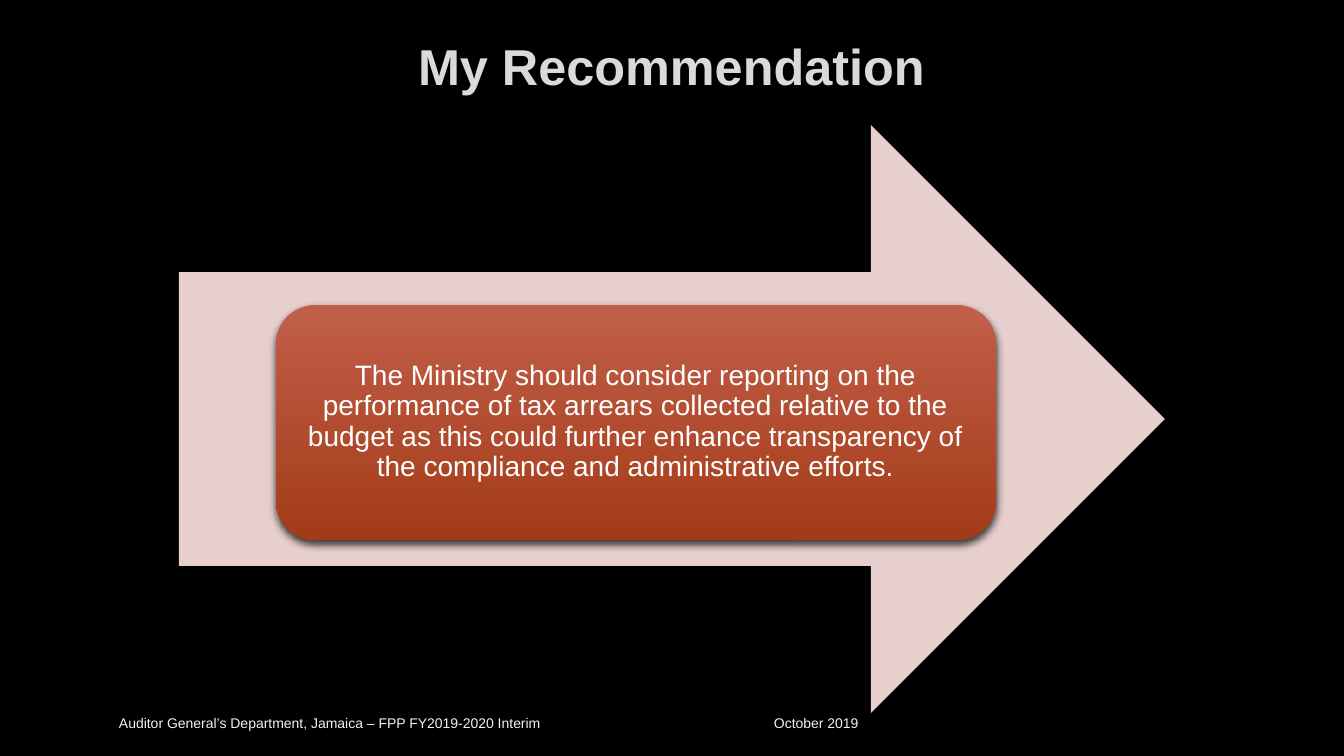
import pptx
import pptx.util
import pptx.dml.color
import pptx.enum.shapes
import pptx.enum.text
import pptx.oxml
import pptx.oxml.ns

WIDE, HIGH = 1344, 756
SCALE = 12192000 / WIDE
NS = pptx.oxml.ns.nsdecls("a")
SHAPE = pptx.enum.shapes.MSO_SHAPE
ALIGN = pptx.enum.text.PP_ALIGN


def px(num):
    return pptx.util.Emu(round(num * SCALE))


def paint(color, code):
    color.rgb = pptx.dml.color.RGBColor.from_string(code)


def add_text(slide, text, box, size, color, bold=False, align=ALIGN.LEFT,
             inset=(10, 5, 10, 5), line=None):
    """Add a middle-anchored text box; inset is left, top, right, bottom."""
    frame = slide.shapes.add_textbox(*map(px, box)).text_frame
    frame.word_wrap = True
    frame.vertical_anchor = pptx.enum.text.MSO_ANCHOR.MIDDLE
    (frame.margin_left, frame.margin_top,
     frame.margin_right, frame.margin_bottom) = map(px, inset)
    para = frame.paragraphs[0]
    para.alignment = align
    if line:
        para.line_spacing = line
    run = para.add_run()
    run.text = text
    run.font.name = "Arial"
    run.font.size = pptx.util.Pt(size)
    run.font.bold = bold
    paint(run.font.color, color)
    return para


def add_shape(slide, kind, box, fills, blur, dist, alpha):
    """Add a borderless shape with a downward shadow; two fills make a gradient."""
    shape = slide.shapes.add_shape(kind, *map(px, box))
    shape.line.fill.background()
    if len(fills) == 1:
        shape.fill.solid()
        paint(shape.fill.fore_color, fills[0])
    else:
        shape.fill.gradient()
        shape.fill.gradient_angle = 270
        for stop, place, code in zip(shape.fill.gradient_stops, (0, 1), fills):
            stop.position = place
            paint(stop.color, code)
    shape.shadow.inherit = False
    effects = shape.element.spPr.find(pptx.oxml.ns.qn("a:effectLst"))
    effects.append(pptx.oxml.parse_xml(
        f'<a:outerShdw {NS} blurRad="{pptx.util.Pt(blur)}" dist="{pptx.util.Pt(dist)}" '
        f'dir="5400000" rotWithShape="0"><a:srgbClr val="000000">'
        f'<a:alpha val="{alpha * 1000}"/></a:srgbClr></a:outerShdw>'))


def outline(para, code, width, alpha):
    props = para.runs[0].font._element
    props.insert(0, pptx.oxml.parse_xml(
        f'<a:ln {NS} w="{pptx.util.Pt(width)}"><a:solidFill><a:srgbClr val="{code}">'
        f'<a:alpha val="{alpha * 1000}"/></a:srgbClr></a:solidFill>'
        f'<a:prstDash val="solid"/></a:ln>'))


def tab_stop(para, place):
    para._p.get_or_add_pPr().append(pptx.oxml.parse_xml(
        f'<a:tabLst {NS}><a:tab pos="{px(place)}" algn="l"/></a:tabLst>'))


def main():
    deck = pptx.Presentation()
    deck.slide_width, deck.slide_height = px(WIDE), px(HIGH)
    slide = deck.slides.add_slide(deck.slide_layouts[6])
    slide.background.fill.solid()
    paint(slide.background.fill.fore_color, "000000")

    title = add_text(slide, "My Recommendation", (92, 40, 1159, 104), 36, "DADADA",
                     bold=True, align=ALIGN.CENTER, inset=(10, 5, 10, 58))
    outline(title, "404040", 0.75, 10)

    add_shape(slide, SHAPE.RIGHT_ARROW, (179, 125, 986, 588), ["E7CFCD"],
              blur=5, dist=2, alpha=60)
    add_shape(slide, SHAPE.ROUNDED_RECTANGLE, (276, 305, 720, 235),
              ["C25F4A", "A23B17"], blur=6, dist=3, alpha=75)
    add_text(slide, "The Ministry should consider reporting on the performance of tax "
             "arrears collected relative to the budget as this could further enhance "
             "transparency of the compliance and administrative efforts.",
             (287, 316, 697, 212), 20, "FFFFFF", align=ALIGN.CENTER,
             inset=(8, 8, 8, 8), line=0.9)

    footer = add_text(slide, "Auditor General’s Department, Jamaica – "
                      "FPP FY2019-2020 Interim\tOctober 2019",
                      (109, 701, 1016, 43), 10, "F2F2F2")
    tab_stop(footer, 655)
    deck.save("out.pptx")


if __name__ == "__main__":
    main()
